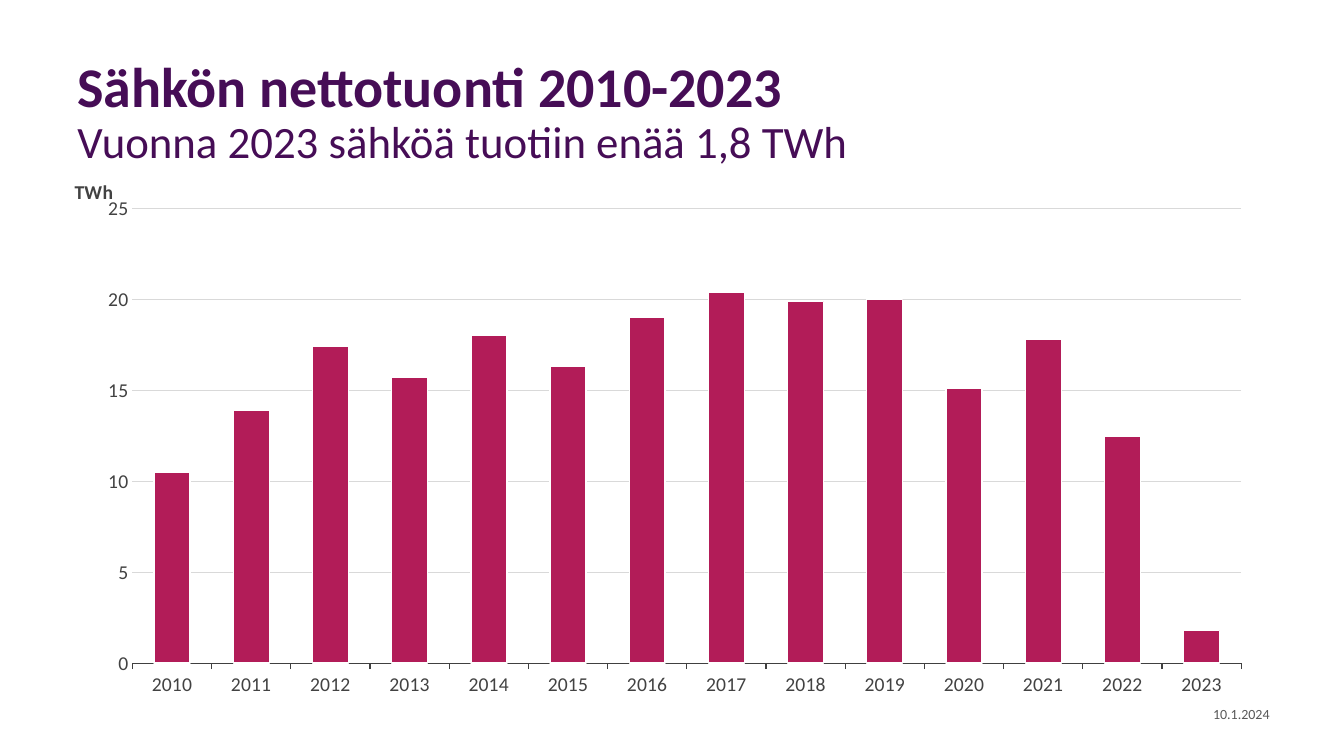
import pptx
import pptx.chart.data
import pptx.dml.color
import pptx.enum.chart
import pptx.enum.text
import pptx.oxml
import pptx.oxml.ns
import pptx.util

PX = 9144
FONT = "Calibri"
HUES = {
    "title": "460D56",
    "date": "595959",
    "label": "424242",
    "axis": "404040",
    "grid": "D9D9D9",
    "bar": "B21C58",
    "edge": "FFFFFF",
}
YEARS = [str(year) for year in range(2010, 2024)]
IMPORTS = [10.5, 13.9, 17.4, 15.7, 18, 16.3, 19,
           20.4, 19.9, 20, 15.1, 17.8, 12.5, 1.8]


def color(name):
    """Return a palette colour."""
    return pptx.dml.color.RGBColor.from_string(HUES[name])


def style(font, size, hue, bold=False):
    """Set the face, size, colour and weight of a font."""
    font.name = FONT
    font.size = pptx.util.Pt(size)
    font.bold = bold
    font.color.rgb = color(hue)


def stroke(line, hue, width):
    """Set the colour and width of a line."""
    line.color.rgb = color(hue)
    line.width = pptx.util.Pt(width)


def add_text(slide, box, text, looks):
    """Add a middle-anchored text box with one look per run."""
    frame = slide.shapes.add_textbox(*(n * PX for n in box)).text_frame
    frame.word_wrap = True
    frame.vertical_anchor = pptx.enum.text.MSO_ANCHOR.MIDDLE
    para = frame.paragraphs[0]
    para.text = text
    for run, look in zip(para.runs, looks):
        style(run.font, *look)
    return para


def place(node, spots, inner=False):
    """Give a chart part a manual layout in fractions of the chart."""
    for old in node.findall(pptx.oxml.ns.qn("c:layout")):
        node.remove(old)
    target = '<c:layoutTarget val="inner"/>' if inner else ""
    modes = "".join(f'<c:{key}Mode val="edge"/>' for key in "xy")
    sizes = "".join(f'<c:{key} val="{val}"/>' for key, val in zip("xywh", spots))
    layout = pptx.oxml.parse_xml(
        f'<c:layout {pptx.oxml.ns.nsdecls("c")}><c:manualLayout>'
        f"{target}{modes}{sizes}</c:manualLayout></c:layout>")
    node.insert(0 if inner else 1, layout)


def style_years(axis):
    """Style the year axis."""
    axis.major_tick_mark = pptx.enum.chart.XL_TICK_MARK.OUTSIDE
    style(axis.tick_labels.font, 14, "label")
    stroke(axis.format.line, "axis", 0.75)


def style_scale(axis):
    """Style the energy axis and its unit label."""
    axis.minimum_scale, axis.maximum_scale, axis.major_unit = 0, 25, 5
    axis.major_tick_mark = pptx.enum.chart.XL_TICK_MARK.NONE
    axis.tick_labels.number_format = "General"
    axis.tick_labels.number_format_is_linked = False
    style(axis.tick_labels.font, 14, "label")
    axis.format.line.fill.background()
    stroke(axis.major_gridlines.format.line, "grid", 0.5)
    title = axis.axis_title
    frame = title.text_frame
    frame.text = "TWh"
    style(frame.paragraphs[0].runs[0].font, 14, "label", True)
    body = title._element.find(".//" + pptx.oxml.ns.qn("a:bodyPr"))
    body.set("rot", "0")
    body.set("vert", "horz")
    place(title._element, (0.003, 0.015))


def add_bars(slide, box):
    """Add the column chart of net imports."""
    data = pptx.chart.data.CategoryChartData()
    data.categories = YEARS
    data.add_series("Series 1", IMPORTS)
    kind = pptx.enum.chart.XL_CHART_TYPE.COLUMN_CLUSTERED
    chart = slide.shapes.add_chart(kind, *(n * PX for n in box), data).chart
    chart.has_legend = chart.has_title = False
    chart.font.name = FONT
    chart.font.size = pptx.util.Pt(10)
    plot = chart.plots[0]
    plot.vary_by_categories = False
    plot.gap_width = 120
    bars = plot.series[0]
    bars.invert_if_negative = False
    bars.format.fill.solid()
    bars.format.fill.fore_color.rgb = color("bar")
    stroke(bars.format.line, "edge", 1)
    style_years(chart.category_axis)
    style_scale(chart.value_axis)
    area = chart._chartSpace.chart.plotArea
    place(area, (0.055, 0.078, 0.94, 0.84), inner=True)


def main():
    """Build and save the slide."""
    deck = pptx.Presentation()
    deck.slide_width, deck.slide_height = 1333 * PX, 750 * PX
    slide = deck.slides.add_slide(deck.slide_layouts[6])
    head = add_text(
        slide, (67, 40, 1037, 145),
        "Sähkön nettotuonti 2010-2023\vVuonna 2023 sähköä tuotiin enää 1,8 TWh",
        [(40, "title", True), (32, "title")])
    head.line_spacing = 0.9
    date = add_text(slide, (1158, 695, 111, 27), "10.1.2024", [(10, "date")])
    date.alignment = pptx.enum.text.PP_ALIGN.RIGHT
    date.space_after = pptx.util.Pt(6)
    add_bars(slide, (67, 165, 1170, 537))
    deck.save("out.pptx")


if __name__ == "__main__":
    main()
